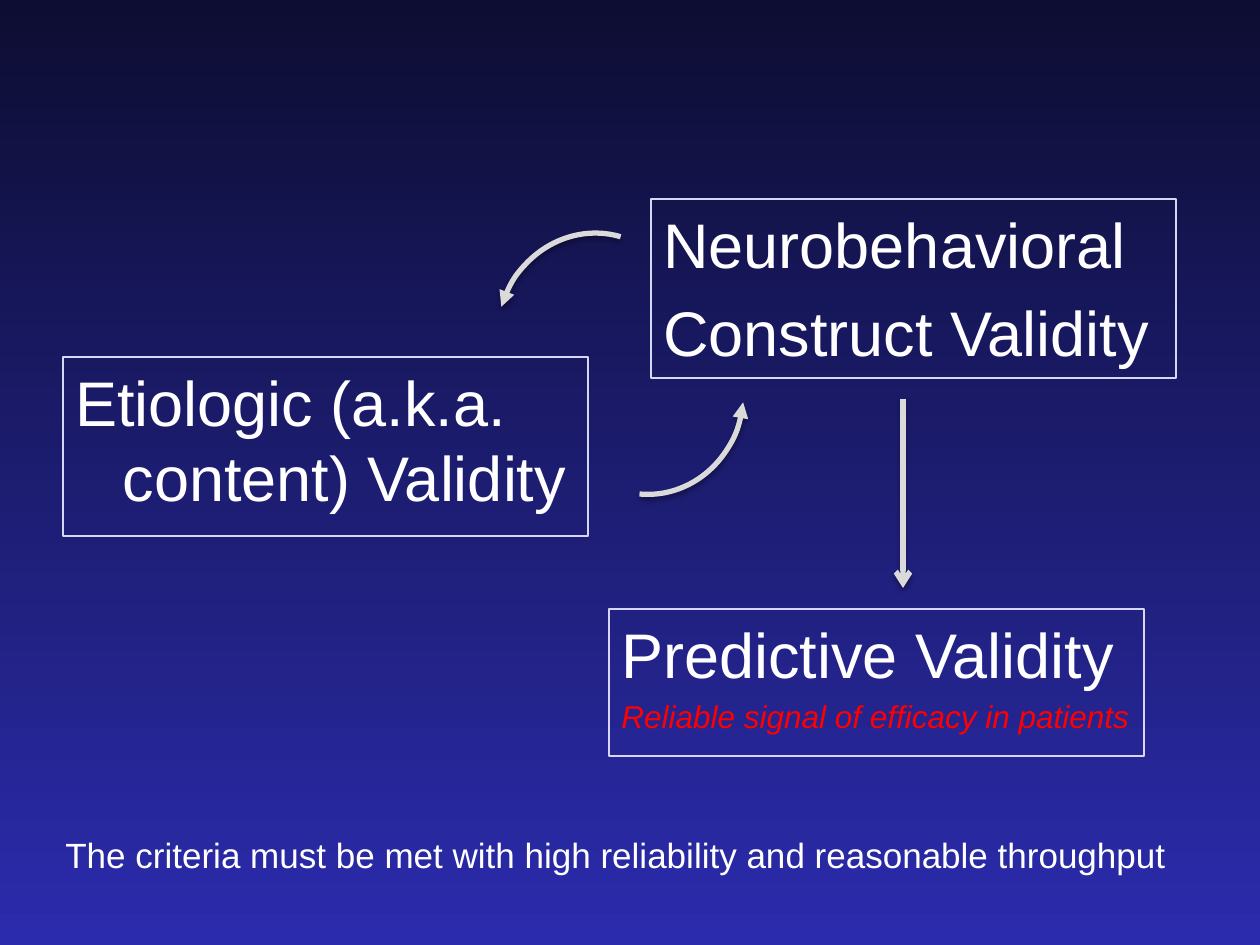
from dataclasses import dataclass

import pptx
import pptx.util
from pptx.dml.color import RGBColor
from pptx.enum.shapes import MSO_CONNECTOR, MSO_SHAPE
from pptx.enum.text import MSO_ANCHOR, PP_ALIGN
from pptx.oxml.ns import qn
from lxml import etree

EMU_PER_PX = 914400 / 126


def px(length):
    return pptx.util.Emu(round(length * EMU_PER_PX))


def add_xml(parent, tag, **attributes):
    return etree.SubElement(parent, qn(tag), attributes)


@dataclass(frozen=True)
class Theme:
    font: str = "Arial"
    sky_top: str = "0D0D33"
    sky_bottom: str = "2B2BAD"
    text: str = "FFFFFF"
    accent: str = "FF0000"
    border: str = "D6D6F5"
    arrow: str = "DADADA"
    heading_size: int = 36
    caption_size: int = 20
    note_size: int = 18
    border_width: float = 0.75
    arrow_width: float = 3


class Board:
    """Holds the style and the current slide."""

    def __init__(self, slide, theme):
        self.slide = slide
        self.theme = theme

    def background(self):
        fill = self.slide.background.fill
        fill.gradient()
        fill.gradient_angle = 270
        colors = (self.theme.sky_top, self.theme.sky_bottom)
        for stop, color, position in zip(fill.gradient_stops, colors, (0, 1)):
            stop.color.rgb = RGBColor.from_string(color)
            stop.position = position

    def set_text(self, paragraph, text, size, color=None, italic=False):
        run = paragraph.add_run()
        run.text = text
        style = {"name": self.theme.font, "size": pptx.util.Pt(size), "italic": italic}
        for attribute, value in style.items():
            setattr(run.font, attribute, value)
        run.font.color.rgb = RGBColor.from_string(color or self.theme.text)
        paragraph.alignment = PP_ALIGN.LEFT

    def outline(self, line, color, width):
        line.color.rgb = RGBColor.from_string(color)
        line.width = pptx.util.Pt(width)

    def criterion(self, left, top, width, height, *lines):
        box = self.slide.shapes.add_shape(
            MSO_SHAPE.RECTANGLE, px(left), px(top), px(width), px(height))
        box.shadow.inherit = False
        box.fill.background()
        self.outline(box.line, self.theme.border, self.theme.border_width)
        frame = box.text_frame
        frame.word_wrap = True
        frame.vertical_anchor = MSO_ANCHOR.TOP
        for index, line in enumerate(lines):
            paragraph = frame.add_paragraph() if index else frame.paragraphs[0]
            self.set_text(paragraph, **line)
            # Hanging indent, and space before as a share of the type size
            properties = paragraph._p.get_or_add_pPr()
            properties.set("marL", "342900")
            properties.set("indent", "-342900")
            add_xml(add_xml(properties, "a:spcBef"), "a:spcPct", val="20000")

    def caption(self, left, top, width, height, text):
        box = self.slide.shapes.add_textbox(px(left), px(top), px(width), px(height))
        box.text_frame.word_wrap = True
        self.set_text(box.text_frame.paragraphs[0], text, self.theme.caption_size)

    def finish_arrow(self, arrow, end, head):
        self.outline(arrow.line, self.theme.arrow, self.theme.arrow_width)
        properties = arrow._element.spPr
        add_xml(properties.find(qn("a:ln")), end, type=head)
        effects = add_xml(properties, "a:effectLst")
        shadow = add_xml(effects, "a:outerShdw", blurRad="39370", dist="22860",
                         dir="5400000", rotWithShape="0")
        add_xml(add_xml(shadow, "a:srgbClr", val="000000"), "a:alpha", val="35000")

    def straight_arrow(self, x, top, bottom):
        arrow = self.slide.shapes.add_connector(
            MSO_CONNECTOR.STRAIGHT, px(x), px(top), px(x), px(bottom))
        self.finish_arrow(arrow, "a:tailEnd", "arrow")

    def curved_arrow(self, left, top, width, height, rotation):
        arc = self.slide.shapes.add_shape(
            MSO_SHAPE.ARC, px(left), px(top), px(width), px(height))
        arc.rotation = rotation
        arc.fill.background()
        self.finish_arrow(arc, "a:headEnd", "triangle")


def main():
    deck = pptx.Presentation()
    deck.slide_width, deck.slide_height = px(1260), px(945)
    theme = Theme()
    board = Board(deck.slides.add_slide(deck.slide_layouts[6]), theme)
    board.background()

    def heading(text):
        return {"text": text, "size": theme.heading_size}

    efficacy_note = {"text": "Reliable signal of efficacy in patients",
                     "size": theme.note_size, "color": theme.accent, "italic": True}

    # Three kinds of validity
    board.criterion(651, 199, 525, 179,
                    heading("Neurobehavioral"), heading("Construct Validity"))
    board.criterion(63, 357, 525, 179, heading("Etiologic (a.k.a. content) Validity"))
    board.criterion(609, 609, 535, 147, heading("Predictive Validity"), efficacy_note)

    # Closing requirement
    board.caption(53, 827, 1207, 55,
                  "The criteria must be met with high reliability and reasonable throughput")

    # Construct leads to prediction; construct and etiology inform each other
    board.straight_arrow(903, 399, 588)
    board.curved_arrow(491, 239, 202, 189, 286.5)
    board.curved_arrow(548, 299, 202, 189, 95.4)

    deck.save("out.pptx")


if __name__ == "__main__":
    main()
